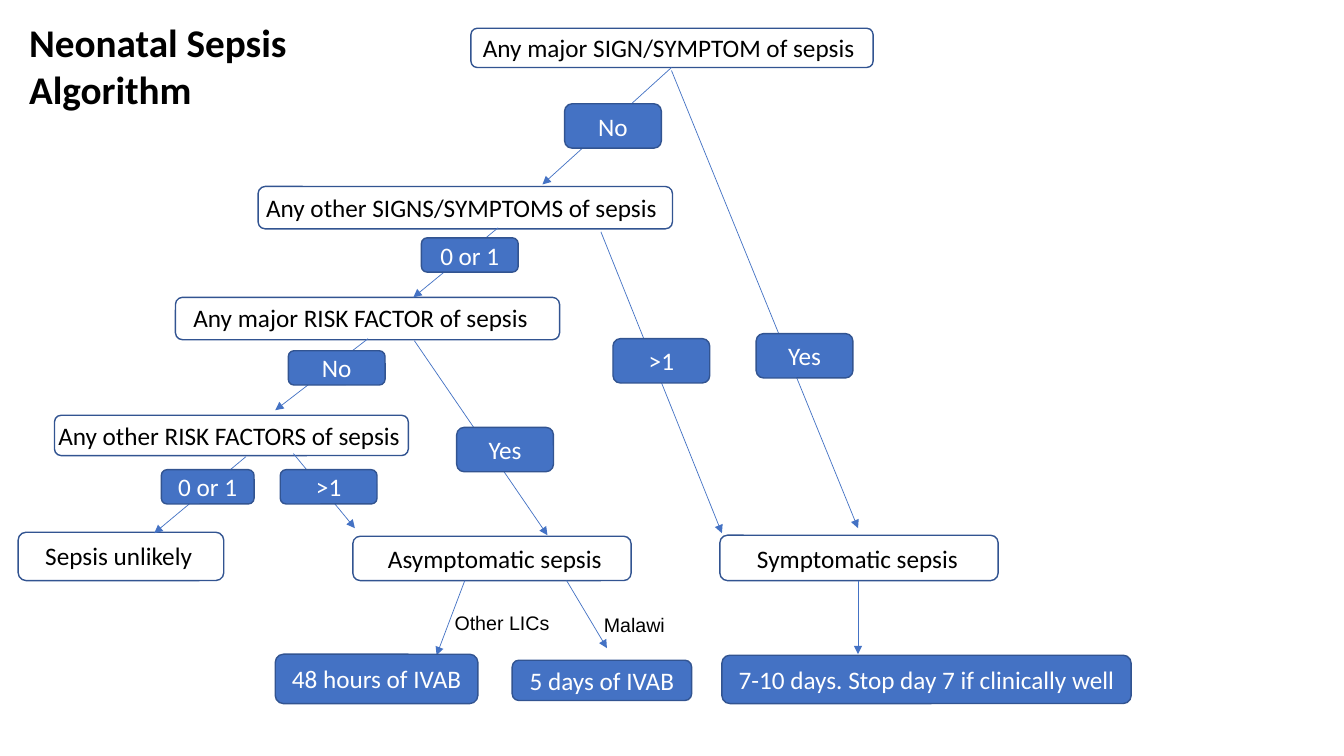
"""Build the neonatal sepsis decision algorithm slide."""
from lxml.etree import SubElement
from pptx import Presentation
from pptx.dml.color import RGBColor
from pptx.enum.shapes import MSO_CONNECTOR, MSO_SHAPE
from pptx.enum.text import MSO_ANCHOR, MSO_AUTO_SIZE, PP_ALIGN
from pptx.oxml.ns import qn
from pptx.util import Inches, Pt

BLUE = RGBColor(0x44, 0x72, 0xC4)
DARK_BLUE = RGBColor(0x32, 0x54, 0x91)
BLACK = RGBColor(0, 0, 0)
WHITE = RGBColor(0xFF, 0xFF, 0xFF)

STEPS = [
    ("Any major SIGN/SYMPTOM of sepsis", (4.67, 0.28, 3.99, 0.39), (4.69, 0.27, 3.95, 0.4)),
    ("Any other SIGNS/SYMPTOMS of sepsis", (2.56, 1.85, 4.11, 0.42), (2.54, 1.86, 4.15, 0.4)),
    ("Any major RISK FACTOR of sepsis", (1.74, 2.95, 3.81, 0.42), (1.82, 2.95, 3.66, 0.4)),
    ("Any other RISK FACTORS of sepsis", (0.54, 4.12, 3.51, 0.4), (0.48, 4.12, 3.67, 0.4)),
    ("Sepsis unlikely", (0.18, 5.28, 2.04, 0.48), (0.35, 5.31, 1.81, 0.4)),
    ("Asymptomatic sepsis", (3.5, 5.32, 2.76, 0.44), (3.75, 5.34, 2.63, 0.4)),
    ("Symptomatic sepsis", (7.14, 5.31, 2.76, 0.45), (7.41, 5.34, 2.76, 0.4)),
]
ARROWS = [
    ((6.66, 0.67), (5.38, 1.83)),
    ((6.66, 0.7), (8.51, 5.24)),
    ((4.94, 2.26), (4.1, 2.95)),
    ((5.96, 2.3), (7.16, 5.29)),
    ((3.65, 3.36), (2.73, 4.07)),
    ((4.11, 3.38), (5.43, 5.31)),
    ((2.44, 4.53), (1.53, 5.29)),
    ((2.91, 4.5), (3.52, 5.24)),
    ((4.61, 5.76), (4.33, 6.5)),
    ((5.62, 5.76), (6.02, 6.43)),
    ((8.51, 5.76), (8.51, 6.49)),
]
ANSWERS = [
    ("No", (5.6, 1.03, 0.96, 0.44)),
    ("Yes", (7.5, 3.31, 0.96, 0.44)),
    ("0 or 1", (4.18, 2.36, 0.96, 0.34)),
    (">1", (6.08, 3.36, 0.96, 0.44)),
    ("No", (2.86, 3.48, 0.96, 0.34)),
    ("Yes", (4.53, 4.24, 0.96, 0.44)),
    ("0 or 1", (1.6, 4.66, 0.92, 0.34)),
    (">1", (2.78, 4.66, 0.96, 0.34)),
]
TREATMENTS = [
    ("48 hours of IVAB", (2.73, 6.49, 2.01, 0.49)),
    ("5 days of IVAB", (5.08, 6.55, 1.78, 0.4)),
    ("7-10 days. Stop day 7 if clinically well", (7.16, 6.5, 4.06, 0.48)),
]
REGIONS = [
    ("Other LICs", (4.41, 6.01, 1.16, 0.34)),
    ("Malawi", (5.89, 6.03, 0.96, 0.34)),
]


def write(frame, text, size, color, font="Calibri", bold=False):
    """Fill a text frame with one styled paragraph."""
    frame.word_wrap = True
    frame.text = text
    style = frame.paragraphs[0].runs[0].font
    style.name, style.size, style.bold = font, Pt(size), bold
    style.color.rgb = color


def add_label(slide, text, area, size=18, font="Calibri", bold=False):
    """Add black left-aligned text."""
    label = slide.shapes.add_textbox(*map(Inches, area))
    write(label.text_frame, text, size, BLACK, font, bold)
    label.text_frame.auto_size = MSO_AUTO_SIZE.SHAPE_TO_FIT_TEXT


def add_frame(slide, area):
    """Add an unfilled rounded frame and return it."""
    frame = slide.shapes.add_shape(MSO_SHAPE.ROUNDED_RECTANGLE, *map(Inches, area))
    frame.shadow.inherit = False
    frame.fill.background()
    frame.line.color.rgb = DARK_BLUE
    frame.line.width = Pt(1)
    return frame


def add_blue_box(slide, text, area):
    """Add a filled rounded box with centred white text."""
    box = add_frame(slide, area)
    box.fill.solid()
    box.fill.fore_color.rgb = BLUE
    write(box.text_frame, text, 18, WHITE)
    box.text_frame.vertical_anchor = MSO_ANCHOR.MIDDLE
    box.text_frame.paragraphs[0].alignment = PP_ALIGN.CENTER


def add_arrow(slide, start, end):
    """Add a thin straight arrow."""
    arrow = slide.shapes.add_connector(MSO_CONNECTOR.STRAIGHT, *map(Inches, start + end))
    arrow.line.color.rgb = BLUE
    arrow.line.width = Pt(0.5)
    SubElement(arrow.line._get_or_add_ln(), qn("a:tailEnd"), type="triangle")
    SubElement(arrow._element.spPr, qn("a:effectLst"))


def main():
    """Assemble and save the slide."""
    deck = Presentation()
    deck.slide_width, deck.slide_height = Inches(13.33), Inches(7.5)
    slide = deck.slides.add_slide(deck.slide_layouts[6])
    add_label(slide, "Neonatal Sepsis Algorithm", (0.19, 0.13, 2.95, 1.04), 28, bold=True)
    for question, outline, label_area in STEPS:
        add_frame(slide, outline)
        add_label(slide, question, label_area)
    for start, end in ARROWS:
        add_arrow(slide, start, end)
    for text, area in ANSWERS + TREATMENTS:
        add_blue_box(slide, text, area)
    for region, area in REGIONS:
        add_label(slide, region, area, 14, "Arial")
    deck.save("out.pptx")


if __name__ == "__main__":
    main()
